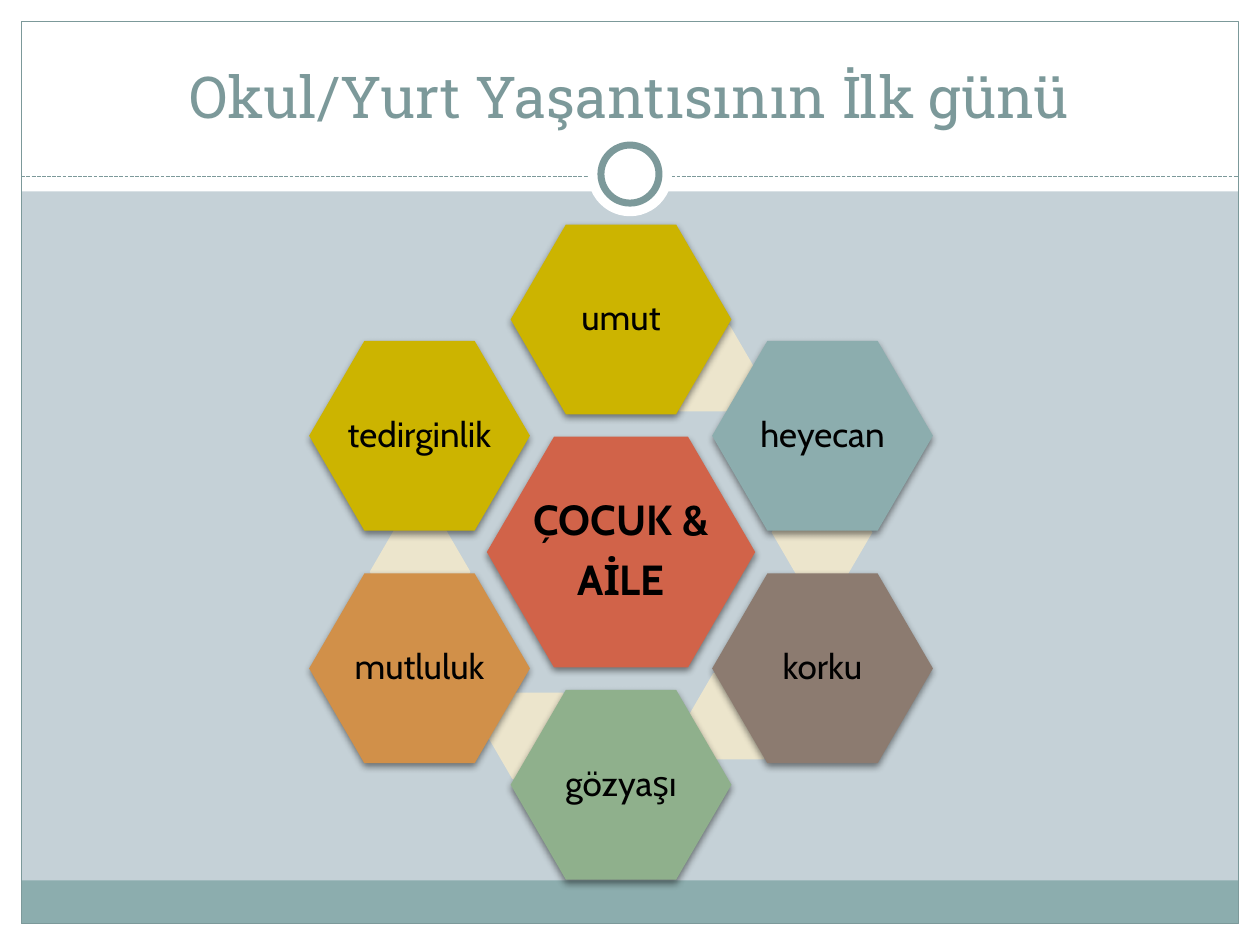
from math import sin, cos, radians
from lxml.etree import SubElement as Sub
from pptx import Presentation
from pptx.dml.color import RGBColor as Rgb
from pptx.enum.dml import MSO_LINE as Dash
from pptx.enum.shapes import MSO_CONNECTOR as Conn, MSO_SHAPE as Kind
from pptx.enum.text import MSO_ANCHOR as Anchor, PP_ALIGN as Align
from pptx.oxml.ns import qn
from pptx.util import Cm, Pt

TITLE = "Okul/Yurt Yaşantısının İlk günü"
CORE = (["ÇOCUK &", "AİLE"], "D16349")
PETALS = [
    ("umut", "CCB400"),
    ("heyecan", "8CADAE"),
    ("korku", "8C7B70"),
    ("gözyaşı", "8FB08C"),
    ("mutluluk", "D19049"),
    ("tedirginlik", "CCB400"),
]
WHITE, TEAL, CREAM = "FFFFFF", "7C999A", "ECE5CC"
WIDE, HIGH, EDGE = 25.4, 19.05, 0.43
BANDS = [
    (0, HIGH - EDGE, WIDE, EDGE, WHITE),
    (0, 0, WIDE, 3.86, WHITE),
    (0, 0, EDGE, HIGH, WHITE),
    (WIDE - EDGE, 0, EDGE, HIGH, WHITE),
    (EDGE, 17.75, WIDE - 2 * EDGE, 0.87, "8CADAE"),
]
MID = (12.52, 11.13)
RING, LINK_RING, LINK_TURN = 4.69, 4.07, 24.4

deck = Presentation()
deck.slide_width, deck.slide_height = Cm(WIDE), Cm(HIGH)
slide = deck.slides.add_slide(deck.slide_layouts[5])
shapes = slide.shapes


def paint(part, color):
    part.solid()
    part.fore_color.rgb = Rgb.from_string(color)


def draw(kind, x, y, w, h, fill=None, line=None, width=0.75):
    shape = shapes.add_shape(kind, Cm(x), Cm(y), Cm(w), Cm(h))
    shape.shadow.inherit = False
    for part, color in ((shape.fill, fill), (shape.line.fill, line)):
        if color:
            paint(part, color)
        else:
            part.background()
    if line:
        shape.line.width = Pt(width)
    return shape


def write(para, text, font, size, color, bold=False):
    para.alignment = Align.CENTER
    run = para.add_run()
    run.text = text
    run.font.name, run.font.size, run.font.bold = font, Pt(size), bold
    paint(run.font.fill, color)


def shade(shape):
    box = shape._element.spPr.find(qn("a:effectLst"))
    cast = Sub(box, qn("a:outerShdw"), blurRad=str(Pt(4)), dist=str(Pt(2)),
               dir="5400000", rotWithShape="0")
    tone = Sub(cast, qn("a:srgbClr"), val="000000")
    Sub(tone, qn("a:alpha"), val="45000")


def spot(ring, turn):
    angle = radians(turn)
    return MID[0] + ring * sin(angle), MID[1] - ring * cos(angle)


def cell(mid, w, h, color, lines=(), size=20, bold=False):
    shape = draw(Kind.HEXAGON, mid[0] - w / 2, mid[1] - h / 2, w, h, color)
    shape.adjustments[0], shape.adjustments[1] = 0.29, 1.15
    if not lines:
        return
    shade(shape)
    frame = shape.text_frame
    frame.word_wrap = False
    frame.vertical_anchor = Anchor.MIDDLE
    frame.margin_left = frame.margin_right = Cm(0.08)
    frame.margin_top = frame.margin_bottom = Cm(0.08)
    for i, text in enumerate(lines):
        para = frame.add_paragraph() if i else frame.paragraphs[0]
        para.line_spacing = 0.9
        para.space_after = Pt(size * 0.35)
        write(para, text, "Cabin", size, "000000", bold)


paint(slide.background.fill, "C5D1D7")
for x, y, w, h, color in BANDS:
    draw(Kind.RECTANGLE, x, y, w, h, color)
draw(Kind.RECTANGLE, EDGE, EDGE, WIDE - 2 * EDGE, HIGH - 2 * EDGE, line=TEAL)

rule = shapes.add_connector(Conn.STRAIGHT, Cm(EDGE), Cm(3.56), Cm(WIDE - EDGE), Cm(3.56))
paint(rule.line.fill, TEAL)
rule.line.width = Pt(0.75)
rule.line.dash_style = Dash.SQUARE_DOT
Sub(rule._element.spPr, qn("a:effectLst"))

for size, line in ((1.7, None), (1.17, TEAL)):
    draw(Kind.OVAL, (WIDE - size) / 2, 3.51 - size / 2, size, size, WHITE, line, 4)

title = shapes.title
title.left, title.top, title.width, title.height = Cm(0.84), Cm(0.64), Cm(23.7), Cm(2.11)
title.text_frame.vertical_anchor = Anchor.BOTTOM
write(title.text_frame.paragraphs[0], TITLE, "Roboto Slab", 33, TEAL)
shapes._spTree.append(title._element)

cell(MID, 5.41, 4.67, CORE[1], CORE[0], 24, True)
for i, (word, color) in enumerate(PETALS):
    if i < len(PETALS) - 1:
        cell(spot(LINK_RING, LINK_TURN + 60 * i), 2.03, 1.75, CREAM)
    cell(spot(RING, 60 * i), 4.45, 3.84, color, [word])

deck.save("out.pptx")
